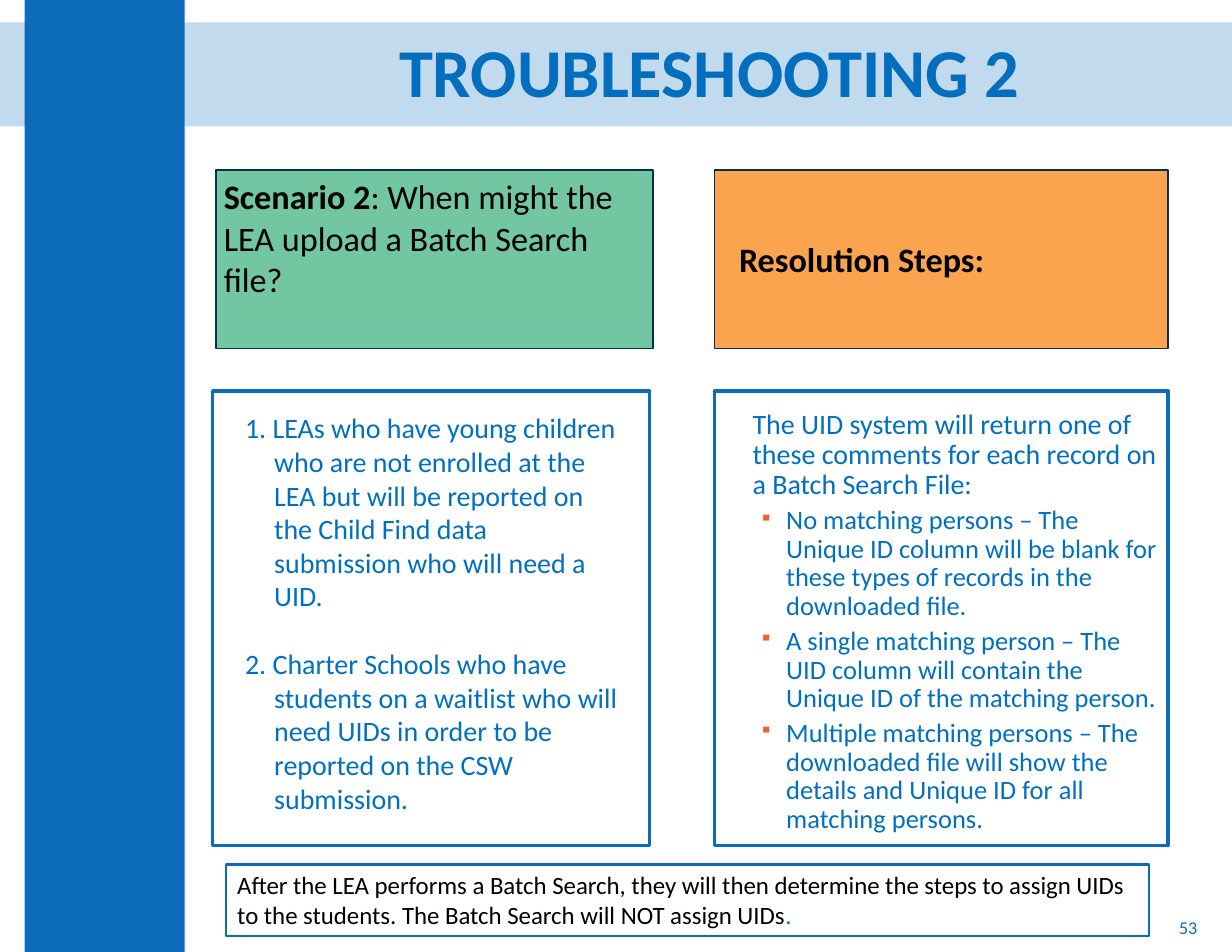
import pptx
import pptx.dml.color
import pptx.enum.shapes
import pptx.enum.text
import pptx.oxml
import pptx.oxml.ns
import pptx.util

COLORS = {
    "blue": "0D6CB9", "text": "0070C0", "black": "000000", "navy": "062F51",
    "green": "72C6A2", "orange": "FAA450", "bullet": "F16038",
}
ALIGN = pptx.enum.text.PP_ALIGN
ANCHOR = pptx.enum.text.MSO_ANCHOR

# Grid of quarter-inch cells
COLUMNS, ROWS = 44, 34
LEFT, RIGHT = 7.6, 25.52
LEFT_WIDTH, RIGHT_WIDTH = 15.6, 16.2
HEADER_TOP, HEADER_HEIGHT = 6.08, 6.36
PANEL_TOP, PANEL_HEIGHT = 13.96, 16.24


def color(name):
    return pptx.dml.color.RGBColor.from_string(COLORS[name])


class Slide:
    font = "Calibri"

    def __init__(self, deck):
        self.page = deck.slides.add_slide(deck.slide_layouts[5])
        self.cell_width = deck.slide_width / COLUMNS
        self.cell_height = deck.slide_height / ROWS

    def place(self, left, top, width, height):
        """Turn grid cells into lengths."""
        return (round(left * self.cell_width), round(top * self.cell_height),
                round(width * self.cell_width), round(height * self.cell_height))

    def rectangle(self, area, fill=None, line=None, weight=1.0, opacity=None):
        box = self.page.shapes.add_shape(
            pptx.enum.shapes.MSO_SHAPE.RECTANGLE, *self.place(*area))
        box.shadow.inherit = False
        if fill:
            box.fill.solid()
            box.fill.fore_color.rgb = color(fill)
        else:
            box.fill.background()
        if opacity:
            tint = box.fill._xPr.find(".//" + pptx.oxml.ns.qn("a:srgbClr"))
            tint.append(pptx.oxml.parse_xml(
                f'<a:alpha {pptx.oxml.ns.nsdecls("a")} val="{opacity * 1000}"/>'))
        if line:
            box.line.color.rgb = color(line)
            box.line.width = pptx.util.Pt(weight)
        else:
            box.line.fill.background()
        return box

    def text_box(self, area):
        return self.page.shapes.add_textbox(*self.place(*area))

    def title(self, area, text):
        box = self.page.shapes.title
        box.left, box.top, box.width, box.height = self.place(*area)
        self.frame(box, anchor=ANCHOR.MIDDLE)
        self.paragraph(box, [(text, 44, "text", True)], align=ALIGN.CENTER, spacing=0.9)

    def frame(self, box, anchor=ANCHOR.TOP, side=0.1, edge=0.05):
        """Set wrapping, anchor and insets in inches."""
        frame = box.text_frame
        frame.word_wrap = True
        frame.auto_size = pptx.enum.text.MSO_AUTO_SIZE.NONE
        frame.vertical_anchor = anchor
        frame.margin_left = frame.margin_right = pptx.util.Inches(side)
        frame.margin_top = frame.margin_bottom = pptx.util.Inches(edge)

    def paragraph(self, box, spans, align=ALIGN.LEFT, spacing=None, before=0,
                  margin=0, indent=0, bullet=None):
        """Add a paragraph of (text, size, colour, bold) spans."""
        frame = box.text_frame
        para = frame.paragraphs[0]
        if para.runs:
            para = frame.add_paragraph()
        properties = para._p.get_or_add_pPr()
        properties.set("marL", str(pptx.util.Inches(margin)))
        properties.set("indent", str(pptx.util.Inches(indent)))
        if bullet:
            namespace = pptx.oxml.ns.nsdecls("a")
            for element in (
                    f'<a:buClr {namespace}><a:srgbClr val="{COLORS["bullet"]}"/></a:buClr>',
                    f'<a:buSzPct {namespace} val="70000"/>',
                    f'<a:buChar {namespace} char="{bullet}"/>'):
                properties.append(pptx.oxml.parse_xml(element))
        para.alignment = align
        if spacing:
            para.line_spacing = spacing
        if before:
            para.space_before = pptx.util.Pt(before)
        for text, size, tone, bold in spans:
            span = para.add_run()
            span.text = text
            span.font.name = self.font
            span.font.size = pptx.util.Pt(size)
            span.font.bold = bold
            span.font.color.rgb = color(tone)


def main():
    deck = pptx.Presentation()
    deck.slide_width = pptx.util.Inches(11)
    deck.slide_height = pptx.util.Inches(8.5)
    slide = Slide(deck)

    slide.rectangle((0, 0.8, COLUMNS, 3.72), fill="blue", opacity=25)
    slide.rectangle((0.88, 0, 5.72, ROWS), fill="blue")
    slide.title((7.96, 0.84, 34.76, 3.72), "TROUBLESHOOTING 2")

    number = slide.text_box((33.24, 32.2, 9.92, 1.8))
    slide.frame(number, anchor=ANCHOR.MIDDLE)
    slide.paragraph(number, [("53", 11.6, "blue", False)], align=ALIGN.RIGHT)

    slide.rectangle((7.72, HEADER_TOP, LEFT_WIDTH, HEADER_HEIGHT), "green", "navy")
    scenario = slide.text_box((LEFT, HEADER_TOP, 15.4, 4.84))
    slide.frame(scenario)
    slide.paragraph(scenario, [
        ("Scenario 2", 22, "black", True),
        (": When might the LEA upload a Batch Search file?", 22, "black", False)])

    resolution = slide.rectangle(
        (RIGHT, HEADER_TOP, RIGHT_WIDTH, HEADER_HEIGHT), "orange", "navy")
    slide.frame(resolution, anchor=ANCHOR.MIDDLE)
    slide.paragraph(resolution, [("Resolution Steps:", 22, "black", True)], margin=0.12)

    for left, width in ((LEFT, LEFT_WIDTH), (RIGHT, RIGHT_WIDTH)):
        slide.rectangle((left, PANEL_TOP, width, PANEL_HEIGHT), line="blue", weight=2.25)

    reasons = slide.text_box((8.36, 14.48, 14.12, 14.96))
    slide.frame(reasons)
    for before, text in (
            (0, "1. LEAs who have young children who are not enrolled at the LEA but will "
                "be reported on the Child Find data submission who will need a UID."),
            (22, "2. Charter Schools who have students on a waitlist who will need UIDs in "
                 "order to be reported on the CSW submission.")):
        slide.paragraph(reasons, [(text, 18, "text", False)],
                        before=before, margin=0.26, indent=-0.26)

    comments = slide.text_box((RIGHT, 14.48, 16.32, 15.6))
    slide.frame(comments, side=0.08, edge=0.04)
    slide.paragraph(comments, [
        ("The UID system will return one of these comments for each record on a "
         "Batch Search File:", 18, "text", False)], spacing=0.9, margin=0.26)
    for text in (
            "No matching persons – The Unique ID column will be blank for these types "
            "of records in the downloaded file.",
            "A single matching person – The UID column will contain the Unique ID of "
            "the matching person.",
            "Multiple matching persons – The downloaded file will show the details and "
            "Unique ID for all matching persons."):
        slide.paragraph(comments, [(text, 17, "text", False)], spacing=0.9,
                        before=4.1, margin=0.56, indent=-0.24, bullet="▪")

    note = slide.rectangle((8.08, 30.88, 32.96, 2.56), line="blue", weight=1.5)
    slide.frame(note)
    slide.paragraph(note, [
        ("After the LEA performs a Batch Search, they will then determine the steps to "
         "assign UIDs to the students. The Batch Search will NOT assign UIDs",
         16, "black", False),
        (".", 16, "blue", False)])

    deck.save("out.pptx")


if __name__ == "__main__":
    main()
